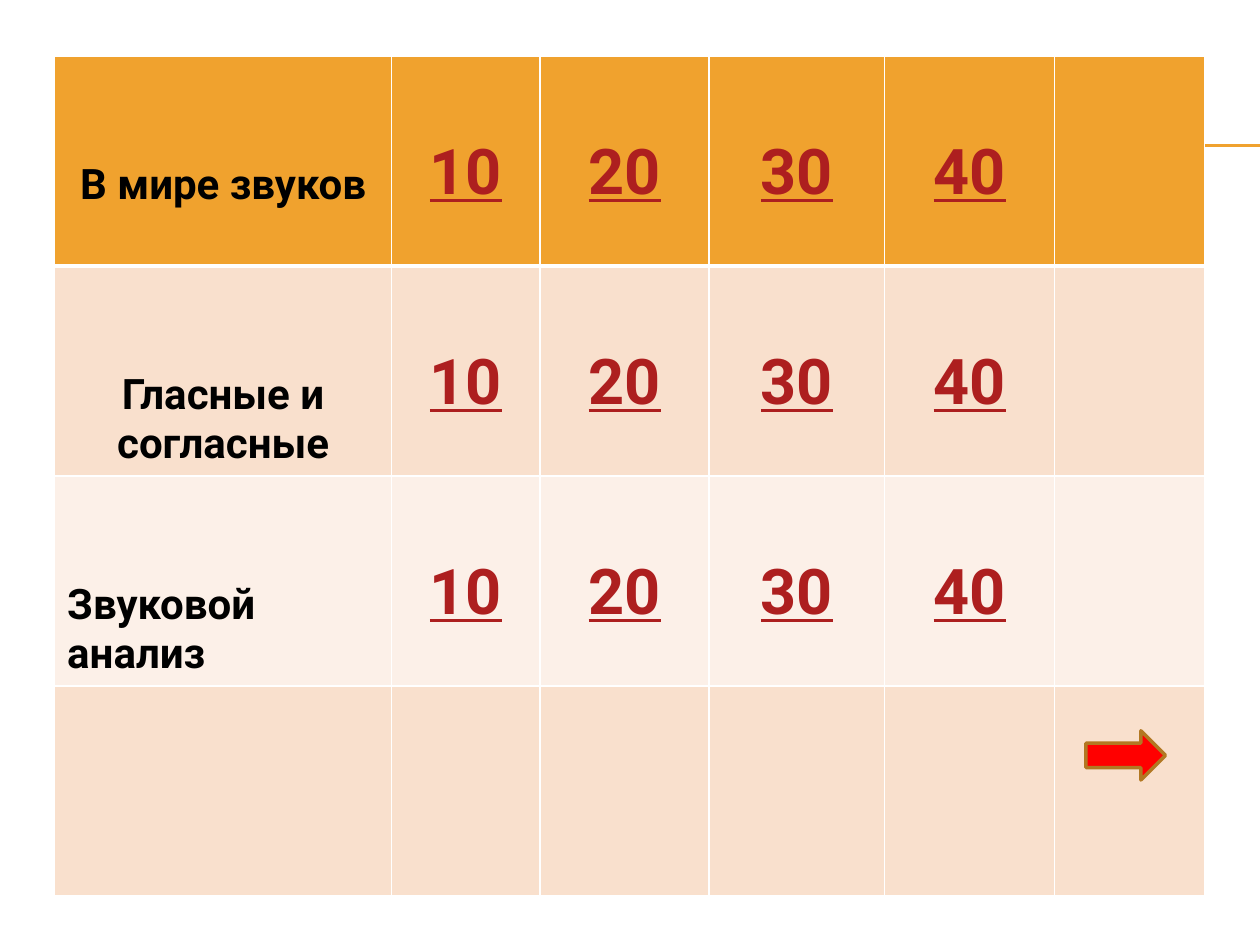
from dataclasses import dataclass

from lxml.etree import SubElement
from pptx import Presentation
from pptx.dml.color import RGBColor
from pptx.enum.shapes import MSO_CONNECTOR, MSO_SHAPE
from pptx.enum.text import PP_ALIGN
from pptx.oxml import parse_xml
from pptx.oxml.ns import nsdecls, qn
from pptx.util import Pt

FONT = "Roboto"
ORANGE, WHITE = "F0A22E", "FFFFFF"
COLUMN_WIDTHS = (192.6, 84.9, 96.6, 100.3, 97.1, 85.7)
ROW_HEIGHT = 120
TABLE_LEFT, TABLE_TOP = 31.2, 32
THIN, THICK = 1, 3


@dataclass(frozen=True)
class TextStyle:
    size: float
    color: str
    top_margin: float
    underline: bool = False


@dataclass(frozen=True)
class Category:
    fill: str
    title: str = ""
    align: PP_ALIGN = PP_ALIGN.CENTER
    points: tuple = ("10", "20", "30", "40")


TITLE_STYLE = TextStyle(24, "000000", 59.5)
POINTS_STYLE = TextStyle(36, "AD1F1F", 45.8, underline=True)

CATEGORIES = (
    Category(ORANGE, "В мире звуков"),
    Category("F9E0CD", "Гласные и согласные"),
    Category("FCF0E8", "Звуковой анализ", PP_ALIGN.LEFT),
    Category("F9E0CD", points=()),
)


def rgb(color: str) -> RGBColor:
    return RGBColor.from_string(color)


def add_rule(slide, y: float) -> None:
    rule = slide.shapes.add_connector(
        MSO_CONNECTOR.STRAIGHT, Pt(40.3), Pt(y), Pt(720), Pt(y))
    rule.line.color.rgb = rgb(ORANGE)
    rule.line.width = Pt(0.75)
    SubElement(rule._element.spPr, qn("a:effectLst"))


def set_borders(cell, top: float, bottom: float) -> None:
    properties = cell._tc.get_or_add_tcPr()
    sides = {"lnL": THIN, "lnR": THIN, "lnT": top, "lnB": bottom}
    for index, (side, width) in enumerate(sides.items()):
        properties.insert(index, parse_xml(
            f'<a:{side} {nsdecls("a")} w="{Pt(width)}"><a:solidFill>'
            f'<a:srgbClr val="{WHITE}"/></a:solidFill></a:{side}>'))


def write_cell(cell, text: str, style: TextStyle, align: PP_ALIGN) -> None:
    cell.margin_top = Pt(style.top_margin)
    cell.text = text
    paragraph = cell.text_frame.paragraphs[0]
    paragraph.alignment = align
    font = paragraph.font
    font.name, font.size, font.bold = FONT, Pt(style.size), True
    font.underline = style.underline
    font.color.rgb = rgb(style.color)
    # Underlined numbers and titles keep their own run colour over the table style
    run_font = paragraph.runs[0].font
    run_font.color.rgb = rgb(style.color)


def add_board(slide) -> None:
    board = slide.shapes.add_table(
        len(CATEGORIES), len(COLUMN_WIDTHS), Pt(TABLE_LEFT), Pt(TABLE_TOP),
        Pt(sum(COLUMN_WIDTHS)), Pt(ROW_HEIGHT * len(CATEGORIES))).table
    for column, width in zip(board.columns, COLUMN_WIDTHS):
        column.width = Pt(width)

    for row, category in enumerate(CATEGORIES):
        board.rows[row].height = Pt(ROW_HEIGHT)
        for column in range(len(COLUMN_WIDTHS)):
            cell = board.cell(row, column)
            cell.fill.solid()
            cell.fill.fore_color.rgb = rgb(category.fill)
            set_borders(cell, THICK if row == 1 else THIN,
                        THICK if row == 0 else THIN)
        if category.title:
            write_cell(board.cell(row, 0), category.title, TITLE_STYLE, category.align)
        for column, points in enumerate(category.points, start=1):
            write_cell(board.cell(row, column), points, POINTS_STYLE, PP_ALIGN.CENTER)


def add_next_arrow(slide) -> None:
    next_arrow = slide.shapes.add_shape(
        MSO_SHAPE.RIGHT_ARROW, Pt(620.6), Pt(417.6), Pt(45.4), Pt(28.1))
    next_arrow.shadow.inherit = False
    next_arrow.fill.solid()
    next_arrow.fill.fore_color.rgb = rgb("FF0000")
    next_arrow.line.color.rgb = rgb("B27822")
    next_arrow.line.width = Pt(2)


def main() -> None:
    presentation = Presentation()
    presentation.slide_width, presentation.slide_height = Pt(720), Pt(540)
    slide = presentation.slides.add_slide(presentation.slide_layouts[6])

    # Double rule behind the board
    for y in (82.8, 83.5):
        add_rule(slide, y)

    # Game board and the arrow to the next round
    add_board(slide)
    add_next_arrow(slide)

    presentation.save("out.pptx")


if __name__ == "__main__":
    main()
